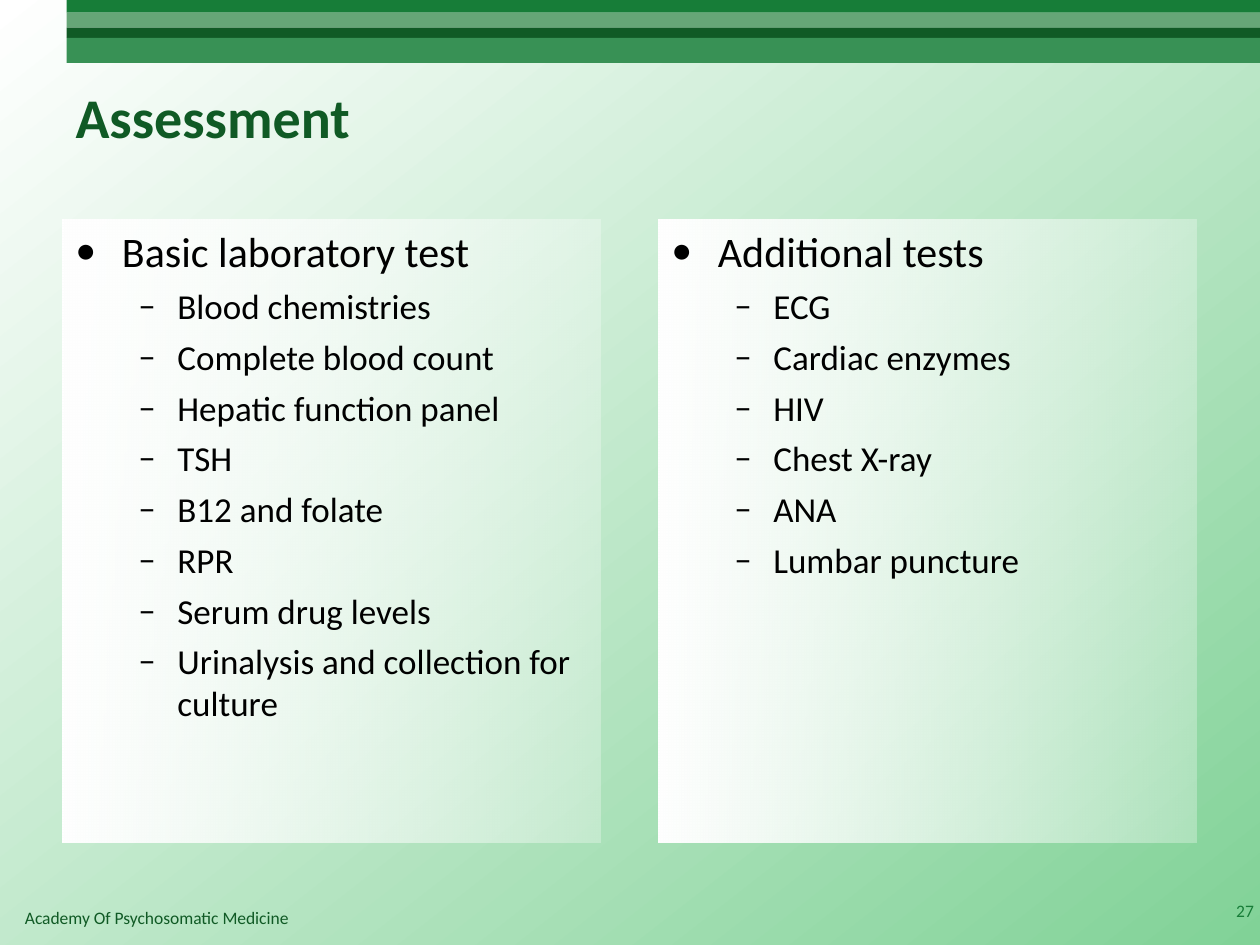
from dataclasses import dataclass
from itertools import pairwise
from typing import Any, NamedTuple

from lxml.etree import SubElement
from pptx import Presentation
from pptx.dml.color import RGBColor
from pptx.enum.shapes import MSO_SHAPE
from pptx.enum.text import MSO_ANCHOR, MSO_AUTO_SIZE, PP_ALIGN
from pptx.oxml.ns import qn
from pptx.util import Inches, Pt

CELL = Inches(0.1)
COLUMNS, ROWS = 100, 75


class Area(NamedTuple):
    column: float
    row: float
    columns: float
    rows: float


@dataclass(frozen=True)
class Theme:
    font: str = "Calibri"
    white: str = "FFFFFF"
    black: str = "000000"
    mint: str = "81D297"
    forest: str = "105A25"
    green: str = "177D38"
    sage: str = "66A677"
    leaf: str = "389155"
    title_size: int = 32
    heading_size: int = 24
    item_size: int = 20
    small_size: int = 10
    background_angle: int = 52
    panel_opacity: int = 30


@dataclass(frozen=True)
class Level:
    number: int
    bullet: str
    margin: float
    hanging: float
    size: int
    space: int


@dataclass(frozen=True)
class Panel:
    column: float
    heading: str
    items: tuple[str, ...]


THEME = Theme()
HEADING = Level(0, "•", 0.37, 0.37, THEME.heading_size, 0)
ITEM = Level(1, "–", 0.81, 0.31, THEME.item_size, 5)
BAND_COLUMN = 5.3
BAND_ROWS = (0, 1, 2.2, 3, 5)
BAND_COLORS = (THEME.green, THEME.sage, THEME.forest, THEME.leaf)
PANELS = (
    Panel(5, "Basic laboratory test", (
        "Blood chemistries", "Complete blood count", "Hepatic function panel",
        "TSH", "B12 and folate", "RPR", "Serum drug levels",
        "Urinalysis and collection for culture")),
    Panel(52.3, "Additional tests", (
        "ECG", "Cardiac enzymes", "HIV", "Chest X-ray", "ANA",
        "Lumbar puncture")),
)


def set_format(target: Any, values: dict[str, Any]) -> None:
    for name, value in values.items():
        setattr(target, name, value)


def measure(area: Area) -> tuple[int, ...]:
    return tuple(round(length * CELL) for length in area)


def write(para: Any, text: str, size: int, color: str, bold: bool = False) -> None:
    span = para.add_run()
    span.text = text
    set_format(span.font, {"name": THEME.font, "size": Pt(size), "bold": bold})
    span.font.color.rgb = RGBColor.from_string(color)


def fill_gradient(fill: Any, end: str, angle: int) -> None:
    fill.gradient()
    fill.gradient_angle = -angle % 360
    for stop, color, position in zip(fill.gradient_stops, (THEME.white, end), (0, 1)):
        stop.color.rgb = RGBColor.from_string(color)
        stop.position = position


def add_rectangle(page: Any, area: Area) -> Any:
    box = page.shapes.add_shape(MSO_SHAPE.RECTANGLE, *measure(area))
    box.shadow.inherit = False
    box.line.fill.background()
    return box


def add_bands(page: Any) -> None:
    for (top, bottom), color in zip(pairwise(BAND_ROWS), BAND_COLORS):
        area = Area(BAND_COLUMN, top, COLUMNS - BAND_COLUMN, bottom - top)
        box = add_rectangle(page, area)
        box.fill.solid()
        box.fill.fore_color.rgb = RGBColor.from_string(color)


def add_title(page: Any, text: str) -> None:
    title = page.shapes.title
    left, top, width, height = measure(Area(5, 3, 90, 12.5))
    set_format(title, {"left": left, "top": top, "width": width, "height": height})
    set_format(title.text_frame, {"vertical_anchor": MSO_ANCHOR.MIDDLE,
                                  "auto_size": MSO_AUTO_SIZE.NONE})
    para = title.text_frame.paragraphs[0]
    para.alignment = PP_ALIGN.LEFT
    write(para, text, THEME.title_size, THEME.forest, True)


def add_label(page: Any, area: Area, text: str, color: str,
              alignment: PP_ALIGN, anchor: MSO_ANCHOR) -> None:
    frame = page.shapes.add_textbox(*measure(area)).text_frame
    set_format(frame, {"word_wrap": True, "vertical_anchor": anchor})
    para = frame.paragraphs[0]
    para.alignment = alignment
    write(para, text, THEME.small_size, color)


def add_bullet(para: Any, text: str, level: Level) -> None:
    properties = para._p.get_or_add_pPr()
    properties.set("marL", str(Inches(level.margin)))
    properties.set("indent", str(-Inches(level.hanging)))
    color = SubElement(properties, qn("a:buClr"))
    SubElement(color, qn("a:srgbClr"), val=THEME.black)
    SubElement(properties, qn("a:buFont"), typeface=THEME.font)
    SubElement(properties, qn("a:buChar"), char=level.bullet)
    set_format(para, {"level": level.number, "alignment": PP_ALIGN.LEFT,
                      "space_before": Pt(level.space)})
    write(para, text, level.size, THEME.black)


def add_panel(page: Any, panel: Panel) -> None:
    box = add_rectangle(page, Area(panel.column, 17.4, 42.7, 49.5))
    fill_gradient(box.fill, THEME.white, 0)
    last_color = list(box._element.spPr.iter(qn("a:srgbClr")))[-1]
    SubElement(last_color, qn("a:alpha"), val=str(THEME.panel_opacity * 1000))
    frame = box.text_frame
    set_format(frame, {"word_wrap": True, "vertical_anchor": MSO_ANCHOR.TOP})
    add_bullet(frame.paragraphs[0], panel.heading, HEADING)
    for item in panel.items:
        add_bullet(frame.add_paragraph(), item, ITEM)


def main() -> None:
    deck = Presentation()
    set_format(deck, {"slide_width": COLUMNS * CELL, "slide_height": ROWS * CELL})
    page = deck.slides.add_slide(deck.slide_layouts.get_by_name("Title Only"))
    fill_gradient(page.background.fill, THEME.mint, THEME.background_angle)
    add_bands(page)
    add_title(page, "Assessment")
    for panel in PANELS:
        add_panel(page, panel)
    add_label(page, Area(1, 71.5, 69.4, 2.7), "Academy Of Psychosomatic Medicine",
              THEME.forest, PP_ALIGN.LEFT, MSO_ANCHOR.TOP)
    add_label(page, Area(96.5, 70.3, 4, 4), "27",
              THEME.green, PP_ALIGN.RIGHT, MSO_ANCHOR.MIDDLE)
    deck.save("out.pptx")


if __name__ == "__main__":
    main()
